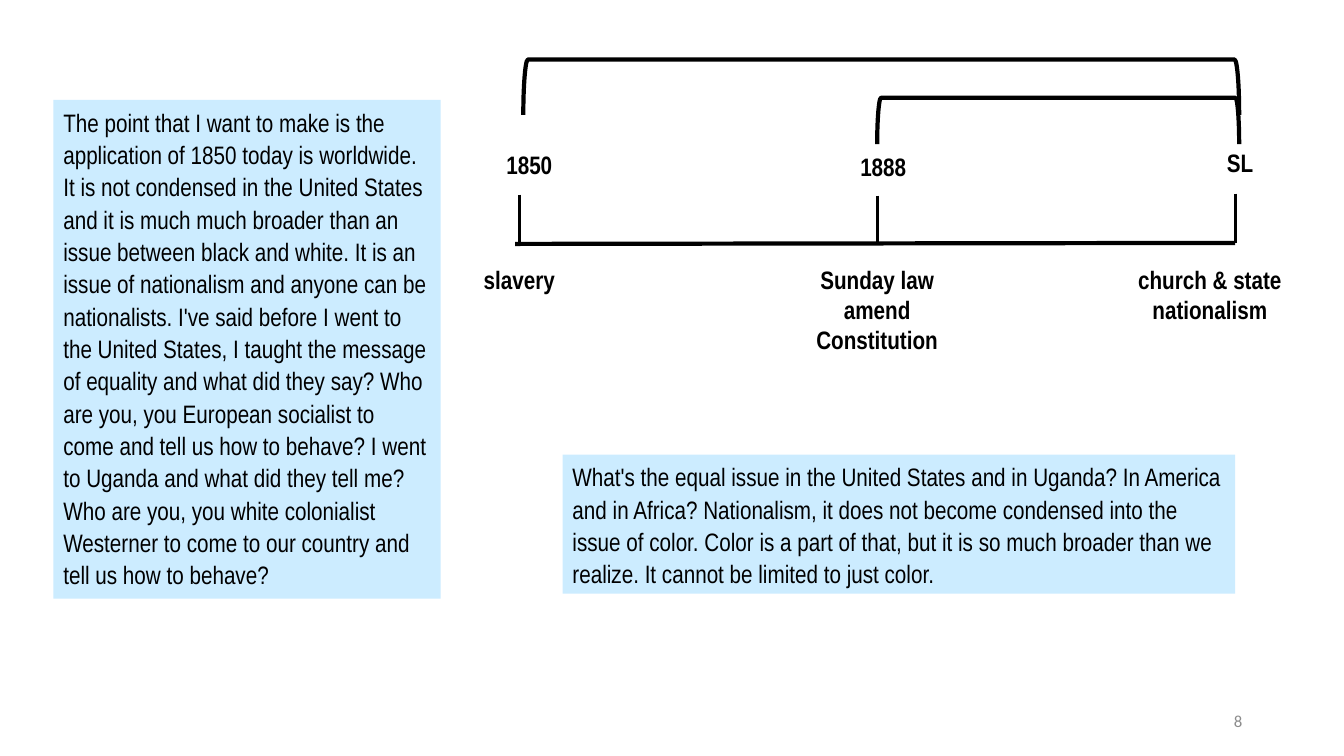
import pptx
import pptx.util
import pptx.dml.color
import pptx.enum.shapes
import pptx.enum.text
import pptx.oxml.ns
import lxml.etree
from dataclasses import dataclass

Inches = pptx.util.Inches
Pt = pptx.util.Pt
Shape = pptx.enum.shapes.MSO_SHAPE
Align = pptx.enum.text.PP_ALIGN
Anchor = pptx.enum.text.MSO_ANCHOR
AutoSize = pptx.enum.text.MSO_AUTO_SIZE


def rgb(value):
    return pptx.dml.color.RGBColor.from_string(value)


@dataclass
class Theme:
    ink: str = "000000"
    panel: str = "CCECFF"
    muted: str = "8C8C8C"
    body_font: str = "Arial Narrow"
    number_font: str = "Calibri"
    body_size: float = 18
    number_size: float = 12
    heavy_line: float = 3
    tick_line: float = 2.25


def write_text(shape, text, *, font, size, color, bold=False, align=Align.LEFT,
               anchor=Anchor.TOP, spacing=None, autosize=AutoSize.SHAPE_TO_FIT_TEXT):
    """Write text with one paragraph per line."""
    frame = shape.text_frame
    frame.word_wrap = True
    frame.auto_size = autosize
    frame.vertical_anchor = anchor
    for index, line in enumerate(text.split("\n")):
        paragraph = frame.add_paragraph() if index else frame.paragraphs[0]
        paragraph.alignment = align
        if spacing:
            paragraph.line_spacing = spacing
        run = paragraph.add_run()
        run.text = line
        run.font.name = font
        run.font.size = Pt(size)
        run.font.bold = bold
        run.font.color.rgb = rgb(color)


class SlideBuilder:
    def __init__(self, slide, theme):
        self.shapes = slide.shapes
        self.theme = theme

    def panel(self, left, top, width, height, text):
        box = self.shapes.add_shape(Shape.RECTANGLE, Inches(left), Inches(top),
                                    Inches(width), Inches(height))
        box.shadow.inherit = False
        box.fill.solid()
        box.fill.fore_color.rgb = rgb(self.theme.panel)
        box.line.fill.background()
        write_text(box, text, font=self.theme.body_font, size=self.theme.body_size,
                   color=self.theme.ink, spacing=1.07)

    def label(self, center, top, width, height, text):
        box = self.shapes.add_textbox(Inches(center - width / 2), Inches(top),
                                      Inches(width), Inches(height))
        write_text(box, text, font=self.theme.body_font, size=self.theme.body_size,
                   color=self.theme.ink, bold=True, align=Align.CENTER)

    def line(self, start, end, weight):
        connector = self.shapes.add_connector(
            pptx.enum.shapes.MSO_CONNECTOR.STRAIGHT,
            *(Inches(value) for value in (*start, *end)))
        connector.line.color.rgb = rgb(self.theme.ink)
        connector.line.width = Pt(weight)
        lxml.etree.SubElement(connector.element.spPr, pptx.oxml.ns.qn("a:effectLst"))

    def bracket(self, left, right, top, depth):
        """A bracket opening downwards: a left bracket turned by 90 degrees."""
        span = right - left
        bracket = self.shapes.add_shape(
            Shape.LEFT_BRACKET, Inches((left + right - depth) / 2),
            Inches(top + (depth - span) / 2), Inches(depth), Inches(span))
        bracket.rotation = 90
        bracket.shadow.inherit = False
        bracket.fill.background()
        bracket.line.color.rgb = rgb(self.theme.ink)
        bracket.line.width = Pt(self.theme.heavy_line)

    def page_number(self, text):
        box = self.shapes.add_textbox(Inches(9.42), Inches(6.95), Inches(3), Inches(0.4))
        write_text(box, text, font=self.theme.number_font, size=self.theme.number_size,
                   color=self.theme.muted, align=Align.RIGHT, anchor=Anchor.MIDDLE,
                   autosize=AutoSize.NONE)


WORLDWIDE = (
    "The point that I want to make is the application of 1850 today is worldwide. "
    "It is not condensed in the United States and it is much much broader than an issue "
    "between black and white. It is an issue of nationalism and anyone can be nationalists. "
    "I've said before I went to the United States, I taught the message of equality and what "
    "did they say? Who are you, you European socialist to come and tell us how to behave? "
    "I went to Uganda and what did they tell me? Who are you, you white colonialist Westerner "
    "to come to our country and tell us how to behave?")
EQUAL_ISSUE = (
    "What's the equal issue in the United States and in Uganda? In America and in Africa? "
    "Nationalism, it does not become condensed into the issue of color. Color is a part of "
    "that, but it is so much broader than we realize. It cannot be limited to just color.")

# Each waymark: tick x, tick top, then (center, top, width, height, text) of both labels
WAYMARKS = [
    (5.15, 1.93, (5.25, 1.43, 0.97, 0.4, "1850"), (5.15, 2.57, 0.97, 0.4, "slavery")),
    (8.7, 1.94, (8.76, 1.45, 1.21, 0.4, "1888"),
     (8.7, 2.57, 1.64, 1.01, "Sunday law\namend Constitution")),
    (12.25, 1.92, (12.3, 1.41, 0.85, 0.4, "SL"),
     (12.0, 2.57, 2.13, 0.71, "church & state\nnationalism")),
]


def main():
    presentation = pptx.Presentation()
    presentation.slide_width = Inches(13.33)
    presentation.slide_height = Inches(7.5)
    theme = Theme()
    builder = SlideBuilder(presentation.slides.add_slide(presentation.slide_layouts[6]), theme)

    # Commentary
    builder.panel(0.53, 0.99, 3.84, 4.95, WORLDWIDE)
    builder.panel(5.58, 4.51, 6.67, 1.38, EQUAL_ISSUE)

    # Timeline
    builder.line((5.11, 2.42), (12.25, 2.41), theme.heavy_line)
    for tick, tick_top, date, event in WAYMARKS:
        builder.line((tick, tick_top), (tick, 2.41), theme.tick_line)
        builder.label(*date)
        builder.label(*event)

    # Spans that end at SL
    builder.bracket(5.19, 12.29, 0.59, 0.55)
    builder.bracket(8.7, 12.29, 0.97, 0.46)

    # Footer
    builder.page_number("8")

    presentation.save("out.pptx")


if __name__ == "__main__":
    main()
